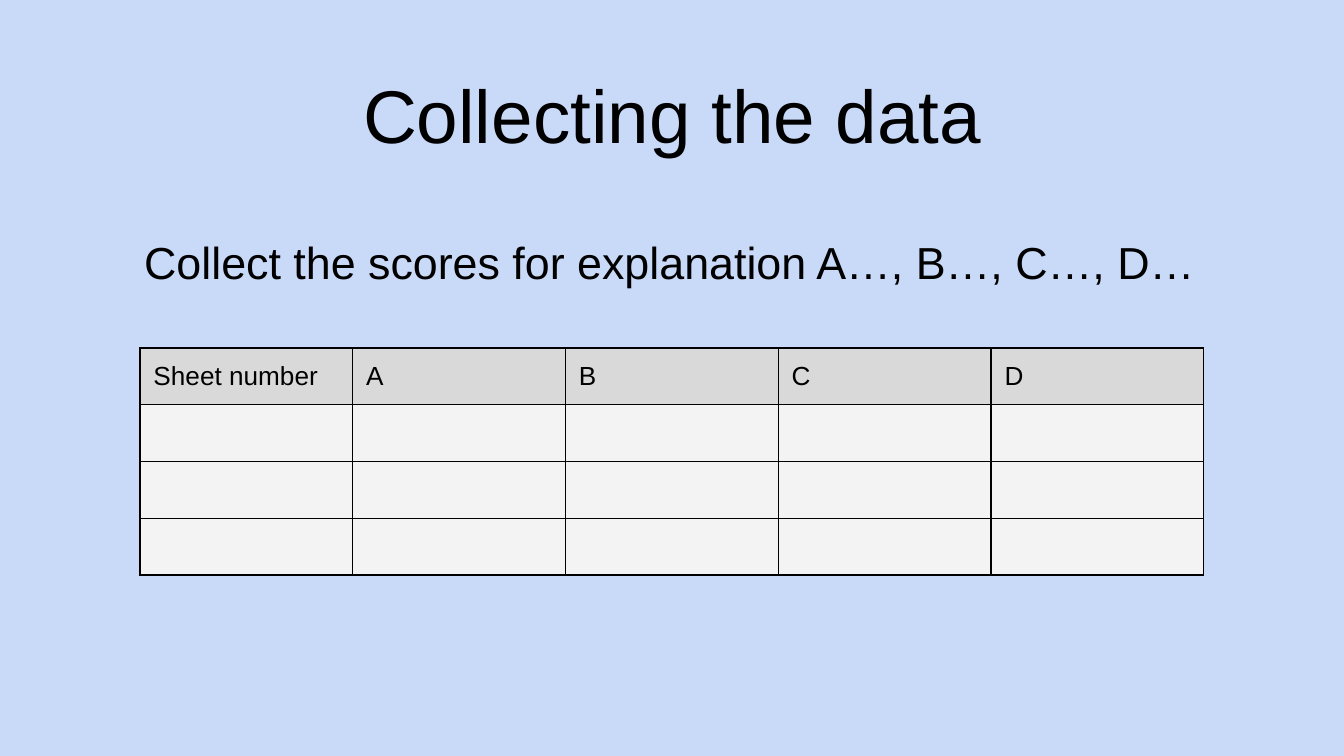
"""Build the "Collecting the data" slide with its blank score table."""
from dataclasses import dataclass

import lxml.etree
import pptx
import pptx.dml.color
import pptx.enum.text
import pptx.oxml.ns
import pptx.util

Pt = pptx.util.Pt
qn = pptx.oxml.ns.qn

COLORS = {
    "background": "C9DAF8",
    "ink": "000000",
    "header": "D9D9D9",
    "entry": "F3F3F3",
}
FONT = "Arial"
HEADINGS = ["Sheet number", "A", "B", "C", "D"]
ENTRY_ROWS = 3
COLUMN_WIDTH = 114
ROW_HEIGHT = 30.4
CELL_MARGIN = 7.2
CELL_TEXT_SIZE = 14
BORDER_WIDTH = 0.75


@dataclass(frozen=True)
class Box:
    left: float
    top: float
    width: float
    height: float


@dataclass(frozen=True)
class TextStyle:
    size: float
    align: pptx.enum.text.PP_ALIGN
    anchor: pptx.enum.text.MSO_ANCHOR
    indent: float = 0
    space_before: float = 0


TITLE_STYLE = TextStyle(40, pptx.enum.text.PP_ALIGN.CENTER, pptx.enum.text.MSO_ANCHOR.MIDDLE)
BODY_STYLE = TextStyle(24, pptx.enum.text.PP_ALIGN.LEFT, pptx.enum.text.MSO_ANCHOR.TOP, 36, 3)


def rgb(name: str) -> pptx.dml.color.RGBColor:
    return pptx.dml.color.RGBColor.from_string(COLORS[name])


def set_font(paragraph, size: float) -> None:
    paragraph.font.name = FONT
    paragraph.font.size = Pt(size)
    paragraph.font.color.rgb = rgb("ink")


def fill_placeholder(placeholder, box: Box, text: str, style: TextStyle) -> None:
    placeholder.left, placeholder.top = Pt(box.left), Pt(box.top)
    placeholder.width, placeholder.height = Pt(box.width), Pt(box.height)
    frame = placeholder.text_frame
    frame.text = text
    frame.word_wrap = True
    frame.auto_size = pptx.enum.text.MSO_AUTO_SIZE.NONE
    frame.vertical_anchor = style.anchor
    paragraph = frame.paragraphs[0]
    properties = paragraph._p.get_or_add_pPr()
    properties.set("marL", str(Pt(style.indent)))
    properties.set("indent", "0")
    lxml.etree.SubElement(properties, qn("a:buNone"))
    paragraph.alignment = style.align
    paragraph.space_before = Pt(style.space_before)
    set_font(paragraph, style.size)


def add_borders(cell) -> None:
    properties = cell._tc.get_or_add_tcPr()
    for side in ("L", "R", "T", "B"):
        line = lxml.etree.SubElement(properties, qn(f"a:ln{side}"), w=str(Pt(BORDER_WIDTH)))
        solid = lxml.etree.SubElement(line, qn("a:solidFill"))
        lxml.etree.SubElement(solid, qn("a:srgbClr"), val=COLORS["ink"])


def format_cell(cell, text: str, fill: str) -> None:
    cell.text = text
    cell.margin_left = cell.margin_right = Pt(CELL_MARGIN)
    cell.margin_top = cell.margin_bottom = Pt(CELL_MARGIN)
    paragraph = cell.text_frame.paragraphs[0]
    set_font(paragraph, CELL_TEXT_SIZE)
    lxml.etree.SubElement(paragraph._p, qn("a:endParaRPr"), sz=str(CELL_TEXT_SIZE * 100))
    add_borders(cell)
    cell.fill.solid()
    cell.fill.fore_color.rgb = rgb(fill)


def add_score_table(slide, left: float, top: float) -> None:
    rows = [HEADINGS] + [[""] * len(HEADINGS)] * ENTRY_ROWS
    scores = slide.shapes.add_table(
        len(rows), len(HEADINGS), Pt(left), Pt(top),
        Pt(COLUMN_WIDTH * len(HEADINGS)), Pt(ROW_HEIGHT * len(rows)),
    ).table
    scores.first_row = False
    scores.horz_banding = False
    for row_index, row in enumerate(rows):
        for column_index, text in enumerate(row):
            fill = "entry" if row_index else "header"
            format_cell(scores.cell(row_index, column_index), text, fill)


def main() -> None:
    deck = pptx.Presentation()
    deck.slide_width, deck.slide_height = Pt(720), Pt(405)
    slide = deck.slides.add_slide(deck.slide_layouts[1])
    slide.background.fill.solid()
    slide.background.fill.fore_color.rgb = rgb("background")
    fill_placeholder(
        slide.shapes.title, Box(36, 32, 648, 58), "Collecting the data", TITLE_STYLE
    )
    fill_placeholder(
        slide.placeholders[1], Box(34, 122, 648, 261),
        "Collect the scores for explanation A…, B…, C…, D…", BODY_STYLE,
    )
    add_score_table(slide, 75, 186.5)
    deck.save("out.pptx")


if __name__ == "__main__":
    main()
